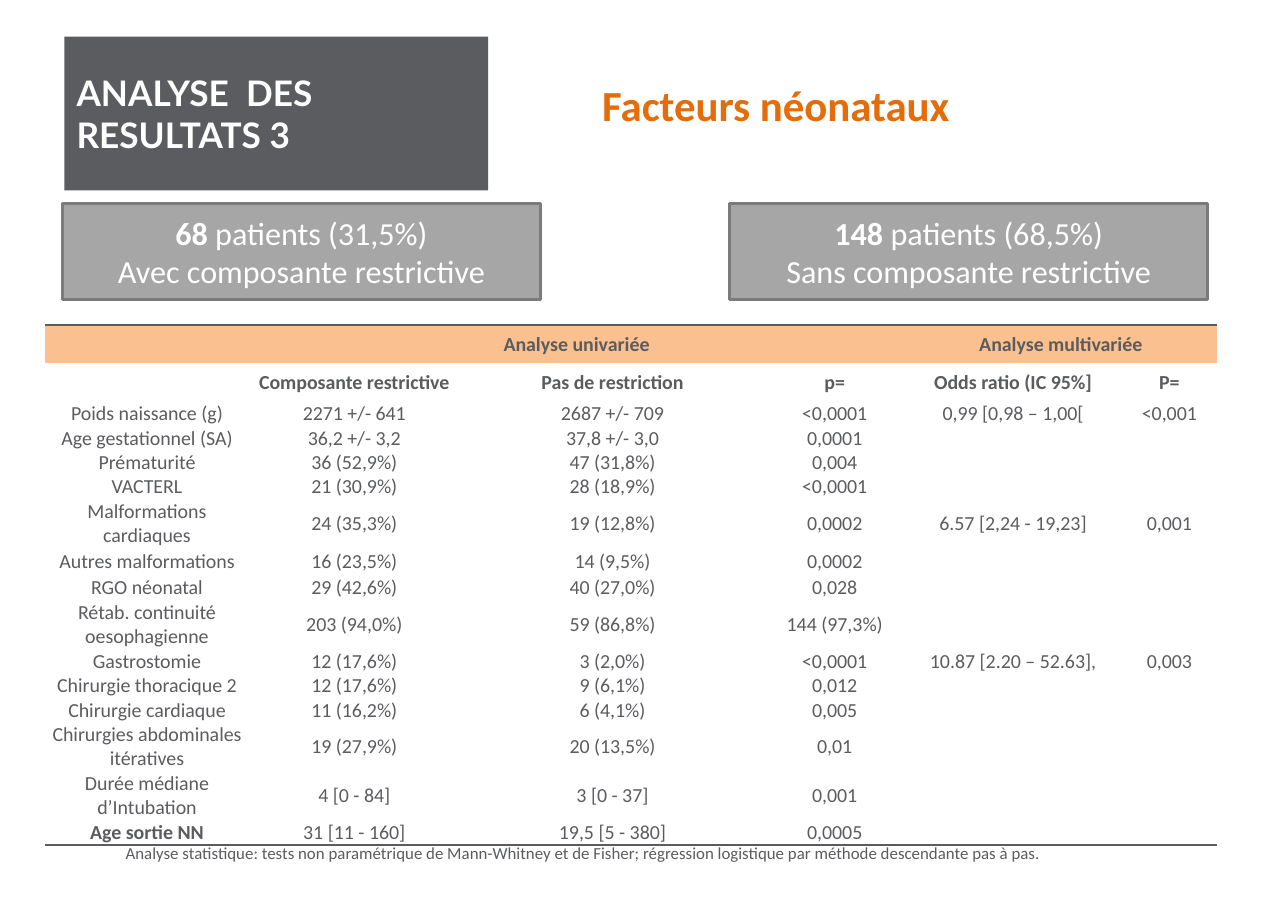
from lxml import etree
from pptx import Presentation
from pptx.dml.color import RGBColor
from pptx.enum.shapes import MSO_SHAPE
from pptx.enum.text import MSO_ANCHOR, MSO_AUTO_SIZE, PP_ALIGN
from pptx.oxml.ns import qn
from pptx.util import Pt

RECT = MSO_SHAPE.RECTANGLE
MIDDLE = MSO_ANCHOR.MIDDLE
NO_FIT = MSO_AUTO_SIZE.NONE
LEFT, CENTER = PP_ALIGN.LEFT, PP_ALIGN.CENTER

COLORS = {
    "dark": "5B5C5F",
    "white": "FFFFFF",
    "grey": "A6A6A6",
    "edge": "7B7B7B",
    "peach": "FAC090",
    "orange": "E46C0A",
}
NO_STYLE = "{2D5ABB26-0587-4C30-8999-92F81FD0307C}"
CELL_SIZE = 13

COLUMNS = [133, 138, 199.5, 91, 142, 62.5]
HEADER_HEIGHT, LINE_HEIGHT = 25, 16
GROUPS = [(1, 3, "Analyse univariée"), (4, 5, "Analyse multivariée")]
ROWS = [
    ("", "Composante restrictive", "Pas de restriction", "p=", "Odds ratio (IC 95%]", "P="),
    ("Poids naissance (g)", "2271 +/- 641", "2687 +/- 709", "<0,0001", "0,99 [0,98 – 1,00[", "<0,001"),
    ("Age gestationnel (SA)", "36,2 +/- 3,2", "37,8 +/- 3,0", "0,0001", "", ""),
    ("Prématurité", "36 (52,9%)", "47 (31,8%)", "0,004", "", ""),
    ("VACTERL", "21 (30,9%)", "28 (18,9%)", "<0,0001", "", ""),
    ("Malformations cardiaques", "24 (35,3%)", "19 (12,8%)", "0,0002", "6.57 [2,24 - 19,23]", "0,001"),
    ("Autres malformations", "16 (23,5%)", "14 (9,5%)", "0,0002", "", ""),
    ("RGO néonatal", "29 (42,6%)", "40 (27,0%)", "0,028", "", ""),
    ("Rétab. continuité oesophagienne", "203 (94,0%)", "59 (86,8%)", "144 (97,3%)", "", ""),
    ("Gastrostomie", "12 (17,6%)", "3 (2,0%)", "<0,0001", "10.87 [2.20 – 52.63],", "0,003"),
    ("Chirurgie thoracique 2", "12 (17,6%)", "9 (6,1%)", "0,012", "", ""),
    ("Chirurgie cardiaque", "11 (16,2%)", "6 (4,1%)", "0,005", "", ""),
    ("Chirurgies abdominales itératives", "19 (27,9%)", "20 (13,5%)", "0,01", "", ""),
    ("Durée médiane d’Intubation", "4 [0 - 84]", "3 [0 - 37]", "0,001", "", ""),
    ("Age sortie NN", "31 [11 - 160]", "19,5 [5 - 380]", "0,0005", "", ""),
]
ROW_HEIGHTS = {"Autres malformations": 18}
ROW_HEIGHTS.update(dict.fromkeys(
    ["Malformations cardiaques", "Rétab. continuité oesophagienne",
     "Chirurgies abdominales itératives", "Durée médiane d’Intubation"],
    2 * LINE_HEIGHT))


def rgb(name):
    return RGBColor.from_string(COLORS[name])


class SlideBuilder:
    def __init__(self, slide, font="Calibri"):
        self.slide = slide
        self.font = font

    def fill(self, item, color):
        item.fill.solid()
        item.fill.fore_color.rgb = rgb(color)

    def run(self, p, text, size, color, bold=False, font=None):
        r = p.add_run()
        r.text = text
        r.font.name = font or self.font
        r.font.size = Pt(size)
        r.font.bold = bold
        r.font.color.rgb = rgb(color)

    def title(self, text, x, y, w, h):
        sp = self.slide.shapes.title
        sp.left, sp.top, sp.width, sp.height = Pt(x), Pt(y), Pt(w), Pt(h)
        self.fill(sp, "dark")
        tf = sp.text_frame
        tf.auto_size = NO_FIT
        tf.word_wrap = True
        tf.vertical_anchor = MIDDLE
        tf.margin_left = tf.margin_right = Pt(8)
        tf.margin_top = tf.margin_bottom = Pt(4)
        p = tf.paragraphs[0]
        p.alignment = LEFT
        self.run(p, text, 23, "white", True, "Lato")

    def group_box(self, count, share, label, x, y, w, h):
        sp = self.slide.shapes.add_shape(RECT, Pt(x), Pt(y), Pt(w), Pt(h))
        sp.shadow.inherit = False
        self.fill(sp, "grey")
        sp.line.color.rgb = rgb("edge")
        sp.line.width = Pt(2)
        tf = sp.text_frame
        tf.word_wrap = True
        tf.vertical_anchor = MIDDLE
        p = tf.paragraphs[0]
        p.alignment = CENTER
        self.run(p, count, 21, "white", True)
        self.run(p, f" patients ({share})", 21, "white")
        p = tf.add_paragraph()
        p.alignment = CENTER
        self.run(p, label, 21, "white")

    def text(self, text, x, y, w, h, size, color, bold=False):
        sp = self.slide.shapes.add_textbox(Pt(x), Pt(y), Pt(w), Pt(h))
        tf = sp.text_frame
        tf.word_wrap = True
        self.run(tf.paragraphs[0], text, size, color, bold)

    def border(self, cell, side):
        ln = etree.Element(qn(f"a:ln{side}"), w=str(Pt(2)))
        solid = etree.SubElement(ln, qn("a:solidFill"))
        etree.SubElement(solid, qn("a:srgbClr"), val=COLORS["dark"])
        cell._tc.get_or_add_tcPr().insert(0, ln)

    def cell(self, cell, text, color, bold):
        cell.margin_left = cell.margin_right = 0
        cell.margin_top = cell.margin_bottom = 0
        cell.vertical_anchor = MIDDLE
        self.fill(cell, color)
        p = cell.text_frame.paragraphs[0]
        p.alignment = CENTER
        if text:
            self.run(p, text, CELL_SIZE, "dark", bold)
        else:
            etree.SubElement(p._p, qn("a:endParaRPr"), sz=str(CELL_SIZE * 100))

    def table(self, x, y):
        heights = [HEADER_HEIGHT] * 2
        heights += [ROW_HEIGHTS.get(row[0], LINE_HEIGHT) for row in ROWS[1:]]
        frame = self.slide.shapes.add_table(
            len(heights), len(COLUMNS), Pt(x), Pt(y), Pt(sum(COLUMNS)), Pt(sum(heights)))
        table = frame.table
        table.first_row = table.horz_banding = False
        table._tbl.tblPr.find(qn("a:tableStyleId")).text = NO_STYLE
        for column, width in zip(table.columns, COLUMNS):
            column.width = Pt(width)
        for row, height in zip(table.rows, heights):
            row.height = Pt(height)
        groups = {first: label for first, last, label in GROUPS}
        last_row = len(ROWS)
        for j in range(len(COLUMNS)):
            self.cell(table.cell(0, j), groups.get(j, ""), "peach", True)
            self.border(table.cell(0, j), "T")
            for i, row in enumerate(ROWS, 1):
                bold = i == 1 or (i == last_row and j == 0)
                self.cell(table.cell(i, j), row[j], "white", bold)
            self.border(table.cell(last_row, j), "B")
        for first, last, label in GROUPS:
            table.cell(0, first).merge(table.cell(0, last))


def main():
    prs = Presentation()
    prs.slide_width, prs.slide_height = Pt(841.68), Pt(595.44)
    s = SlideBuilder(prs.slides.add_slide(prs.slide_layouts[5]))
    s.title("ANALYSE  DES RESULTATS 3", 42, 24, 277, 100.5)
    s.group_box("68", "31,5%", "Avec composante restrictive", 41, 133, 312, 63)
    s.group_box("148", "68,5%", "Sans composante restrictive", 477, 133, 312, 63)
    s.table(29.5, 212.5)
    s.text("Facteurs néonataux", 386.5, 48, 391, 41, 28, "orange", True)
    s.text("Analyse statistique: tests non paramétrique de Mann-Whitney et de Fisher; "
           "régression logistique par méthode descendante pas à pas.",
           75, 547, 726, 21, 11, "dark")
    prs.save("out.pptx")


if __name__ == "__main__":
    main()
